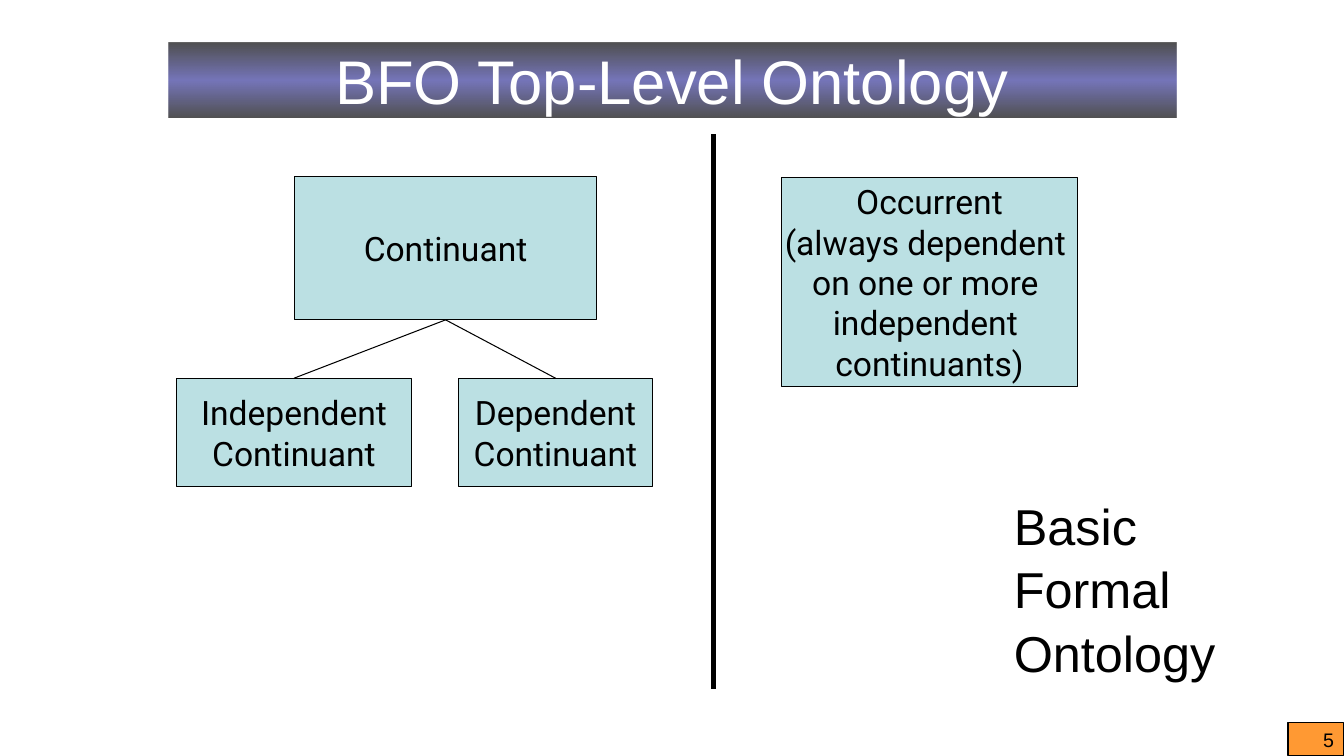
from dataclasses import dataclass

from lxml import etree
from pptx import Presentation
from pptx import util as u
from pptx.dml.color import RGBColor
from pptx.enum import shapes, text
from pptx.oxml import ns, parse_xml

BLACK = RGBColor(0x00, 0x00, 0x00)
WHITE = RGBColor(0xFF, 0xFF, 0xFF)
TEAL = RGBColor(0xBB, 0xE0, 0xE3)
ORANGE = RGBColor(0xFF, 0x99, 0x33)
INDIGO = RGBColor(0x33, 0x33, 0x99)

ALIGN = text.PP_ALIGN
ANCHOR = text.MSO_ANCHOR


@dataclass(frozen=True)
class Area:
    left: float
    top: float
    width: float
    height: float

    def cm(self):
        return [u.Cm(v) for v in (self.left, self.top, self.width, self.height)]


@dataclass(frozen=True)
class Node:
    name: str
    area: Area
    lines: tuple[str, ...]


@dataclass(frozen=True)
class Stop:
    pos: int
    color: RGBColor
    alpha: int


NODES = (
    Node("whole", Area(7.42, 4.45, 7.62, 3.61), ("Continuant",)),
    Node("event", Area(19.69, 4.47, 7.47, 5.28),
         ("Occurrent", "(always dependent ", "on one or more ",
          "independent ", "continuants)")),
    Node("free", Area(4.45, 9.53, 5.92, 2.74), ("Independent", "Continuant")),
    Node("bound", Area(11.56, 9.53, 4.88, 2.74), ("Dependent", "Continuant")),
)
LINKS = (("whole", "free"), ("whole", "bound"))
STOPS = (Stop(0, BLACK, 68), Stop(50, INDIGO, 67), Stop(100, BLACK, 68))


def write(shape, *lines: str, size: float, font: str = "Arial",
          color: RGBColor = BLACK, align=ALIGN.LEFT, anchor=ANCHOR.TOP,
          wrap: bool = True, space: float = 1.0) -> None:
    frame = shape.text_frame
    frame.word_wrap = wrap
    frame.auto_size = text.MSO_AUTO_SIZE.NONE
    frame.vertical_anchor = anchor
    for i, line in enumerate(lines):
        para = frame.add_paragraph() if i else frame.paragraphs[0]
        para.alignment = align
        para.line_spacing = space
        run = para.add_run()
        run.text = line
        run.font.size = u.Pt(size)
        run.font.name = font
        run.font.color.rgb = color


def add_box(slide, area: Area, fill: RGBColor):
    box = slide.shapes.add_shape(shapes.MSO_SHAPE.RECTANGLE, *area.cm())
    box.shadow.inherit = False
    box.fill.solid()
    box.fill.fore_color.rgb = fill
    box.line.color.rgb = BLACK
    box.line.width = u.Pt(0.75)
    return box


def add_line(slide, start: tuple[float, float] = (0, 0),
             end: tuple[float, float] = (0, 0), width: float = 0.75):
    line = slide.shapes.add_connector(
        shapes.MSO_CONNECTOR.STRAIGHT, *(u.Cm(v) for v in start + end))
    line.line.color.rgb = BLACK
    line.line.width = u.Pt(width)
    etree.SubElement(line._element.spPr, ns.qn("a:effectLst"))
    return line


def shade(shape, stops: tuple[Stop, ...]) -> None:
    """Fill with a vertical gradient of translucent stops."""
    shape.fill.gradient()
    shape.fill.gradient_angle = 270
    group = shape._element.spPr.find(".//" + ns.qn("a:gsLst"))
    for old in list(group):
        group.remove(old)
    for stop in stops:
        group.append(parse_xml(
            f'<a:gs {ns.nsdecls("a")} pos="{stop.pos * 1000}">'
            f'<a:srgbClr val="{stop.color}">'
            f'<a:alpha val="{stop.alpha * 1000}"/></a:srgbClr></a:gs>'))


def main() -> None:
    deck = Presentation()
    deck.slide_width, deck.slide_height = u.Cm(33.87), u.Cm(19.05)
    slide = deck.slides.add_slide(deck.slide_layouts[5])

    add_box(slide, Area(32.46, 18.21, 1.41, 0.84), ORANGE)

    title = slide.shapes.title
    title.left, title.top, title.width, title.height = Area(4.24, 1.07, 25.4, 1.9).cm()
    shade(title, STOPS)
    write(title, "BFO Top-Level Ontology", size=44, color=WHITE,
          align=ALIGN.CENTER, anchor=ANCHOR.MIDDLE)

    boxes = {}
    for node in NODES:
        box = boxes[node.name] = add_box(slide, node.area, TEAL)
        write(box, *node.lines, size=24, font="Roboto", align=ALIGN.CENTER,
              anchor=ANCHOR.MIDDLE, wrap=False)

    for top, low in LINKS:
        link = add_line(slide)
        link.begin_connect(boxes[top], 2)
        link.end_connect(boxes[low], 0)
    add_line(slide, (17.98, 3.38), (17.98, 17.35), width=3)

    page = slide.shapes.add_textbox(*Area(27.94, 18.21, 5.93, 0.84).cm())
    write(page, "5", size=14, align=ALIGN.RIGHT)
    motto = slide.shapes.add_textbox(*Area(25.3, 12.27, 5.61, 4.88).cm())
    write(motto, "Basic Formal Ontology", size=36, space=1.05)

    deck.save("out.pptx")


if __name__ == "__main__":
    main()
